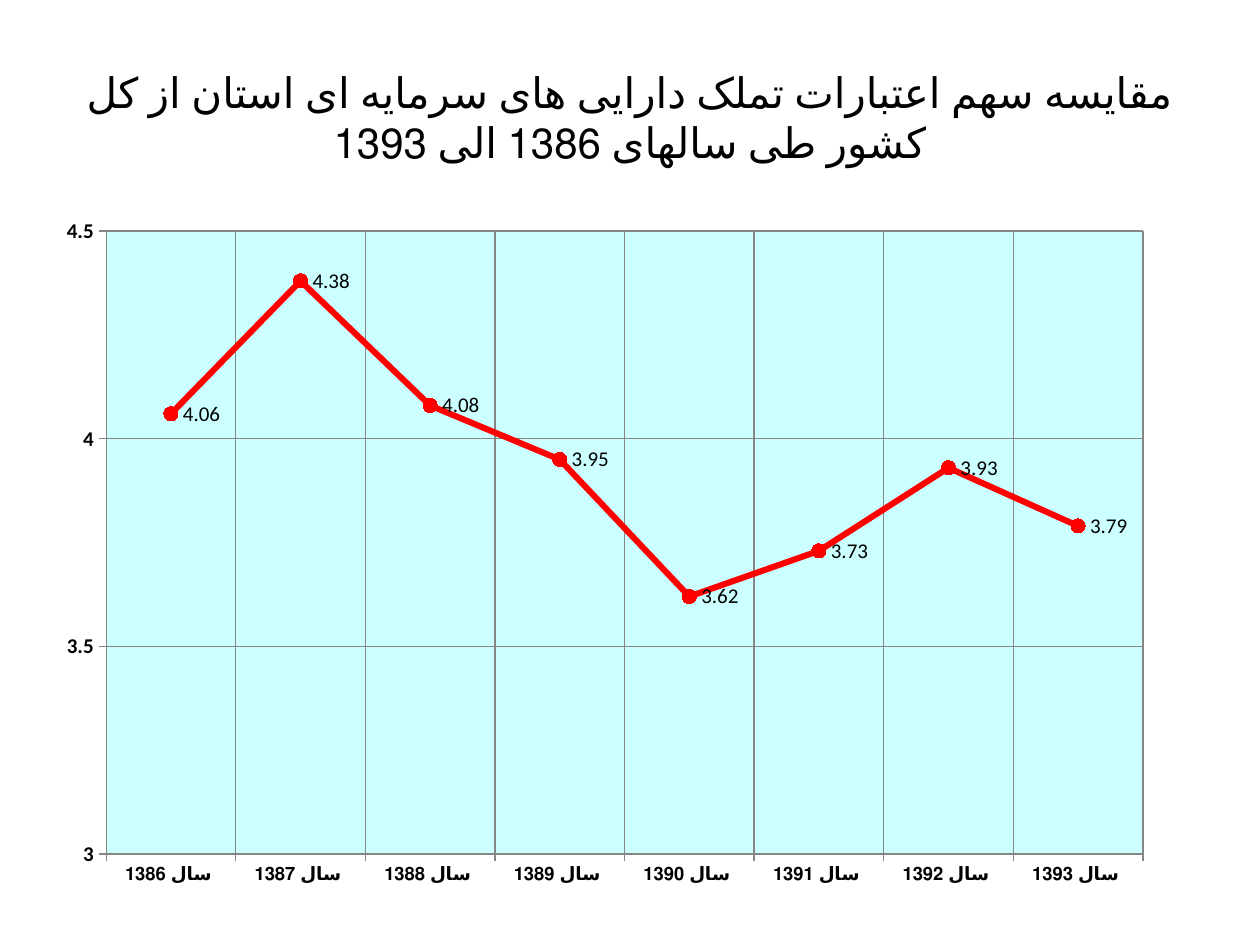
"""Build a slide charting a province's yearly share of national capital credits."""
from pptx import Presentation
from pptx import util as u
from pptx.chart import data
from pptx.dml import color
from pptx.enum import chart as ch, lang, text
from pptx.oxml import ns, parse_xml

THEME = {
    "ink": "000000", "line": "FF0000", "plot": "CCFFFF", "grid": "868686",
    "head": 24, "base": 10, "cat": 10.5, "val": 12, "mark": 8,
    "stroke": 3.5, "thin": 0.75, "main": "Arial", "num": "Calibri",
}


class Deck:
    def __init__(self, theme, wide, high):
        self.theme = theme
        self.prs = Presentation()
        self.put(self.prs, {"slide_width": u.Cm(wide), "slide_height": u.Cm(high)})
        self.slide = self.prs.slides.add_slide(self.prs.slide_layouts[6])

    def put(self, item, vals):
        for key, val in vals.items():
            setattr(item, key, val)

    def tint(self, fill, name):
        fill.solid()
        fill.fore_color.rgb = color.RGBColor.from_string(self.theme[name])

    def font(self, font, size, face="main", bold=False):
        self.put(font, {"size": u.Pt(self.theme[size]),
                        "name": self.theme[face], "bold": bold})
        self.tint(font.fill, "ink")

    def stroke(self, line, name, size):
        self.tint(line.fill, name)
        line.width = u.Pt(self.theme[size])

    def title(self, words, box):
        frame = self.slide.shapes.add_textbox(*map(u.Cm, box)).text_frame
        self.put(frame, {"word_wrap": True, "vertical_anchor": text.MSO_ANCHOR.MIDDLE})
        para = frame.paragraphs[0]
        para.alignment = text.PP_ALIGN.CENTER
        para._p.get_or_add_pPr().set("rtl", "1")
        run = para.add_run()
        run.text = words
        self.font(run.font, "head")
        run.font.language_id = lang.MSO_LANGUAGE_ID.FARSI

    def axis(self, axis, size, face, vals):
        self.put(axis, {"has_major_gridlines": True,
                        "major_tick_mark": ch.XL_TICK_MARK.OUTSIDE,
                        "minor_tick_mark": ch.XL_TICK_MARK.NONE, **vals})
        self.font(axis.tick_labels.font, size, face, True)
        for line in (axis.format.line, axis.major_gridlines.format.line):
            self.stroke(line, "grid", "thin")

    def area(self, chart, box, inner):
        plot = chart._chartSpace.chart.plotArea
        for old in plot.findall(ns.qn("c:layout")):
            plot.remove(old)
        left, top, wide, high = box
        x, y, w, h = inner
        parts = {"x": (x - left) / wide, "y": (y - top) / high,
                 "w": w / wide, "h": h / high}
        spots = "".join(f'<c:{key} val="{val:.4f}"/>' for key, val in parts.items())
        plot.insert(0, parse_xml(
            f'<c:layout {ns.nsdecls("c")}><c:manualLayout><c:layoutTarget val="inner"/>'
            f'<c:xMode val="edge"/><c:yMode val="edge"/>{spots}'
            '</c:manualLayout></c:layout>'))
        plot.append(parse_xml(
            f'<c:spPr {ns.nsdecls("c", "a")}><a:solidFill>'
            f'<a:srgbClr val="{self.theme["plot"]}"/></a:solidFill></c:spPr>'))

    def chart(self, cats, vals, box, inner):
        info = data.CategoryChartData()
        info.categories = cats
        info.add_series("Series 1", vals)
        chart = self.slide.shapes.add_chart(
            ch.XL_CHART_TYPE.LINE_MARKERS_STACKED, *map(u.Cm, box), info).chart
        self.put(chart, {"has_legend": False, "has_title": False})
        self.font(chart.font, "base")
        self.axis(chart.category_axis, "cat", "main", {})
        self.axis(chart.value_axis, "val", "num", {
            "minimum_scale": 3, "maximum_scale": 4.5, "major_unit": 0.5})
        plot = chart.plots[0]
        plot.vary_by_categories = False
        self.series(plot.series[0])
        self.area(chart, box, inner)

    def series(self, row):
        row.smooth = False
        self.stroke(row.format.line, "line", "stroke")
        self.put(row.marker, {"style": ch.XL_MARKER_STYLE.CIRCLE,
                              "size": self.theme["mark"]})
        self.tint(row.marker.format.fill, "line")
        self.stroke(row.marker.format.line, "line", "thin")
        tags = row.data_labels
        self.put(tags, {"show_value": True, "position": ch.XL_LABEL_POSITION.RIGHT})
        self.font(tags.font, "val", "num")


def main():
    deck = Deck(THEME, 25.4, 19.05)
    deck.title("مقایسه سهم اعتبارات تملک دارایی های سرمایه ای استان از کل "
               "کشور طی سالهای 1386 الی 1393", (1.27, 0.76, 22.86, 3.18))
    deck.chart([f"سال {year} " for year in range(1386, 1394)],
               [4.06, 4.38, 4.08, 3.95, 3.62, 3.73, 3.93, 3.79],
               (0.89, 4.11, 22.61, 14), (2.14, 4.66, 20.9, 12.56))
    deck.prs.save("out.pptx")


if __name__ == "__main__":
    main()
